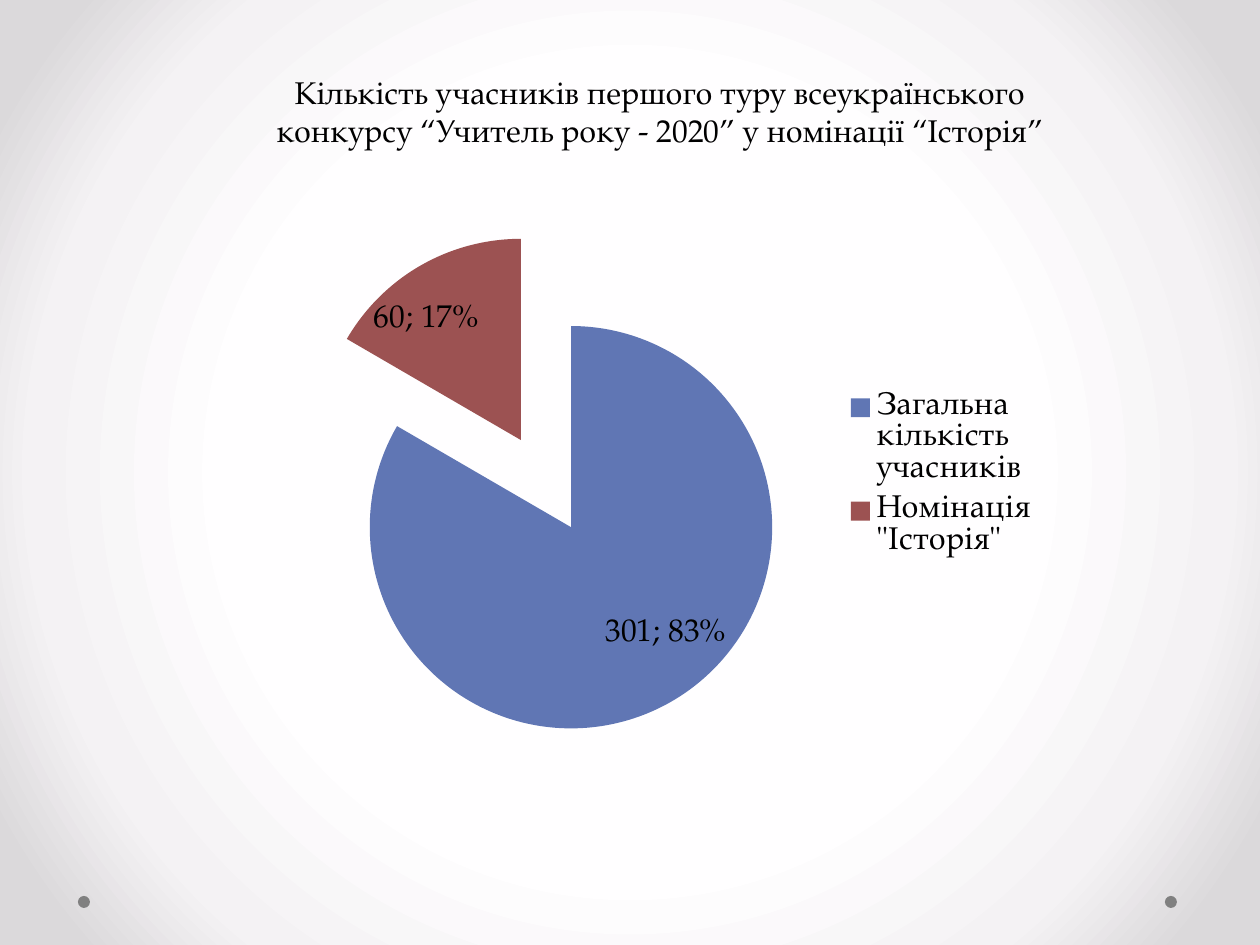
import pptx
import pptx.chart.data
import pptx.dml.color
import pptx.enum.chart
import pptx.enum.shapes
import pptx.enum.text
import pptx.oxml
import pptx.oxml.ns
import pptx.util

SCALE = 914400 // 126  # EMU in one px
FONT = "TeX Gyre Pagella"
COLORS = {"text": "000000", "dot": "808080", "total": "6076B4", "history": "9C5252"}
GLOW = [(50, "FFFEFF"), (76, "F4F2F4"), (92, "DBD9DB")]


def px(length):
    return pptx.util.Emu(length * SCALE)


def rgb(name):
    return pptx.dml.color.RGBColor.from_string(COLORS[name])


def find(parent, tag):
    return parent.find(".//" + pptx.oxml.ns.qn(tag))


def chart_xml(tag, rest):
    return pptx.oxml.parse_xml(f'<c:{tag} {pptx.oxml.ns.nsdecls("c")}{rest}')


def format_font(font, size=18, color="text"):
    font.name, font.size = FONT, pptx.util.Pt(size)
    font.color.rgb = rgb(color)


def write_text(box, text, size=18, color="text", align="CENTER", anchor="BOTTOM"):
    frame = box.text_frame
    frame.word_wrap = True
    frame.vertical_anchor = getattr(pptx.enum.text.MSO_ANCHOR, anchor)
    para = frame.paragraphs[0]
    para.alignment = getattr(pptx.enum.text.PP_ALIGN, align)
    span = para.add_run()
    span.text = text
    format_font(span.font, size, color)


def manual_layout(inner=False, edge=True, **values):
    target = '<c:layoutTarget val="inner"/>' if inner else ""
    modes = '<c:xMode val="edge"/><c:yMode val="edge"/>' if edge else ""
    sizes = "".join(f'<c:{tag} val="{value}"/>' for tag, value in values.items())
    return chart_xml("layout", f"><c:manualLayout>{target}{modes}{sizes}"
                               "</c:manualLayout></c:layout>")


def place(parent, layout, after=None):
    current = parent.find(pptx.oxml.ns.qn("c:layout"))
    if current is not None:
        parent.remove(current)
    if after:
        find(parent, after).addnext(layout)
    else:
        parent.insert(0, layout)


class SlideBuilder:
    def __init__(self, deck):
        self.page = deck.slides.add_slide(deck.slide_layouts[6])

    def radial_background(self, stops):
        self.page.background.fill.solid()
        solid = find(self.page.element, "p:bgPr")[0]
        marks = "".join(f'<a:gs pos="{position * 1000}"><a:srgbClr val="{color}"/></a:gs>'
                        for position, color in stops)
        gradient = pptx.oxml.parse_xml(
            f'<a:gradFill {pptx.oxml.ns.nsdecls("a")} rotWithShape="1">'
            f'<a:gsLst>{marks}</a:gsLst><a:path path="circle">'
            '<a:fillToRect l="50000" t="50000" r="50000" b="50000"/></a:path></a:gradFill>')
        solid.getparent().replace(solid, gradient)

    def dot(self, left, top, size):
        shape = self.page.shapes.add_shape(
            pptx.enum.shapes.MSO_SHAPE.OVAL, px(left), px(top), px(size), px(size))
        shape.shadow.inherit = False
        shape.fill.solid()
        shape.fill.fore_color.rgb = rgb("dot")
        shape.line.fill.background()

    def text(self, left, top, width, height, text, **style):
        box = self.page.shapes.add_textbox(px(left), px(top), px(width), px(height))
        write_text(box, text, **style)

    def pie(self, left, top, width, height, slices, explosion):
        data = pptx.chart.data.CategoryChartData()
        data.categories = [label for label, *_ in slices]
        data.add_series("Series 1", [value for _, value, *_ in slices])
        chart = self.page.shapes.add_chart(
            pptx.enum.chart.XL_CHART_TYPE.PIE,
            px(left), px(top), px(width), px(height), data).chart
        chart.has_title = False
        format_font(chart.font)
        plot = chart.plots[0]
        plot.vary_by_categories = True
        series = plot.series[0]
        series.format.line.fill.background()
        find(series._element, "c:spPr").addnext(
            chart_xml("explosion", f' val="{explosion}"/>'))

        # Labels of the whole series
        inside = pptx.enum.chart.XL_LABEL_POSITION.INSIDE_END
        labels = series.data_labels
        labels.show_value = labels.show_percentage = True
        labels.position = inside
        format_font(labels.font)
        find(labels._element, "c:showBubbleSize").addnext(
            chart_xml("separator", ">; </c:separator>"))
        leader = find(labels._element, "c:showLeaderLines")
        if leader is not None:
            leader.set("val", "0")

        # Slices, each with its label moved by a share of the chart size
        for index, (_, _, color, move_x, move_y) in enumerate(slices):
            point = series.points[index]
            point.format.fill.solid()
            point.format.fill.fore_color.rgb = rgb(color)
            point.format.line.fill.background()
            format_font(point.data_label.font)
            point.data_label.position = inside
            label = labels._element.findall(pptx.oxml.ns.qn("c:dLbl"))[index]
            place(label, manual_layout(edge=False, x=move_x, y=move_y), "c:idx")
            find(label, "c:showPercent").set("val", "1")
            find(label, "c:showBubbleSize").addnext(
                chart_xml("separator", ">; </c:separator>"))

        # Legend and plot positions
        chart.has_legend = True
        legend = chart.legend
        legend.position = pptx.enum.chart.XL_LEGEND_POSITION.RIGHT
        legend.include_in_layout = False
        format_font(legend.font)
        place(legend._element, manual_layout(x=0.75, y=0.34, w=0.24, h=0.33), "c:legendPos")
        place(find(chart._chartSpace, "c:plotArea"),
              manual_layout(inner=True, x=0.1, y=0.07, w=0.6, h=0.9))


def main():
    deck = pptx.Presentation()
    deck.slide_width, deck.slide_height = px(1260), px(945)
    slide = SlideBuilder(deck)

    # Background and corner dots
    slide.radial_background(GLOW)
    for left in (1165, 78):
        slide.dot(left, 896, 12)

    # Title
    slide.text(232, 31, 856, 124, "Кількість учасників першого туру всеукраїнського "
               "конкурсу “Учитель року - 2020” у номінації “Історія”")

    # Participants chart
    slide.pie(210, 193, 840, 559, [
        ("Загальна кількість учасників", 301, "total", 0.07, -0.08),
        ('Номінація "Історія"', 60, "history", -0.06, 0.06),
    ], explosion=25)
    deck.save("out.pptx")


if __name__ == "__main__":
    main()
